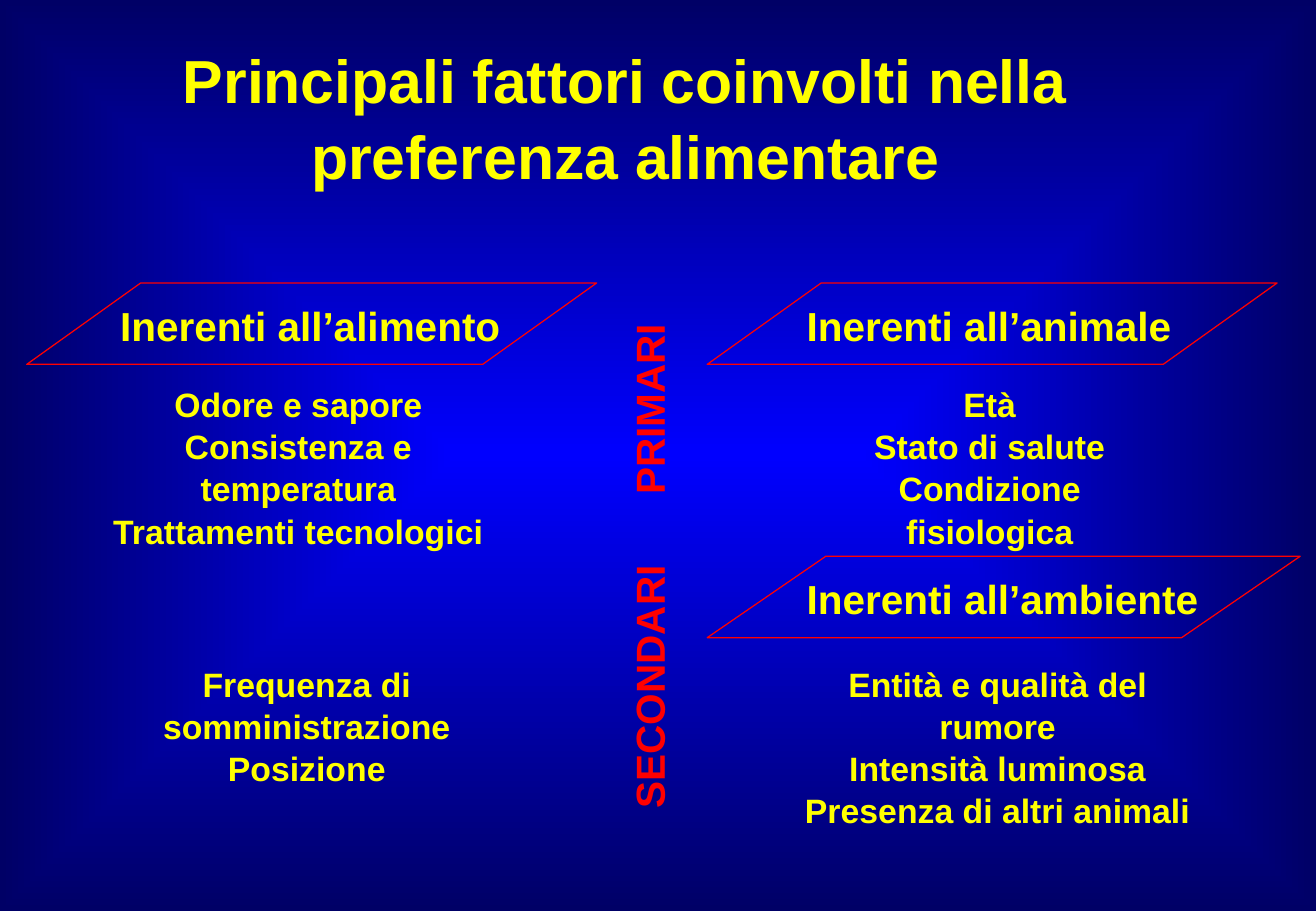
from lxml import etree
from pptx import Presentation
from pptx import util as u
from pptx.dml.color import RGBColor
from pptx.enum import shapes, text
from pptx.oxml.ns import qn

YELLOW, RED = "FFFF00", "FF0000"


def colour(value):
    return RGBColor.from_string(value)


class FactorSlide:
    """Holds the style and current slide, and draws each kind of element."""

    font = "Arial"
    line_spacing = 1.04

    def __init__(self, deck):
        self.page = deck.slides.add_slide(deck.slide_layouts[5])

    def background(self, centre, edge):
        fill = self.page.background.fill
        fill.gradient()
        for stop, value in zip(fill.gradient_stops, (centre, edge)):
            stop.color.rgb = colour(value)
        gradient = self.page.background._cSld.bg.bgPr.find(qn("a:gradFill"))
        radial = etree.Element(qn("a:path"), {"path": "shape"})
        etree.SubElement(radial, qn("a:fillToRect"), dict.fromkeys("ltrb", "50000"))
        gradient.replace(gradient.find(qn("a:lin")), radial)

    def add_lines(self, frame, lines, size, value, align):
        for index, line in enumerate(lines):
            para = frame.add_paragraph() if index else frame.paragraphs[0]
            para.alignment = align
            para.line_spacing = self.line_spacing
            for number, part in enumerate(line.split("\n")):
                if number:
                    para.add_line_break()
                span = para.add_run()
                span.text = part
                span.font.name = self.font
                span.font.size = u.Pt(size)
                span.font.bold = True
                span.font.color.rgb = colour(value)

    def title(self, wording, left, top, width, height):
        box = self.page.shapes.title
        box.left, box.top = u.Inches(left), u.Inches(top)
        box.width, box.height = u.Inches(width), u.Inches(height)
        frame = box.text_frame
        frame.auto_size = text.MSO_AUTO_SIZE.NONE
        frame.vertical_anchor = text.MSO_ANCHOR.MIDDLE
        self.add_lines(frame, [wording], 36, YELLOW, text.PP_ALIGN.CENTER)

    def text_box(self, lines, left, top, width, height, size=20, value=YELLOW,
                 align=text.PP_ALIGN.CENTER, wrap=True):
        box = self.page.shapes.add_textbox(*map(u.Inches, (left, top, width, height)))
        frame = box.text_frame
        frame.word_wrap = wrap
        self.add_lines(frame, lines, size, value, align)
        return frame

    def heading(self, wording, left, top, width, text_left, text_width):
        box = self.page.shapes.add_shape(
            shapes.MSO_SHAPE.FLOWCHART_DATA,
            *map(u.Inches, (left, top, width, 0.67)))
        box.shadow.inherit = False
        box.fill.background()
        box.line.color.rgb = colour(RED)
        box.line.width = u.Pt(0.75)
        self.text_box([wording], text_left, top + 0.08, text_width, 0.5, size=24,
                      align=text.PP_ALIGN.LEFT, wrap=False)

    def side_label(self, wording, top, height):
        frame = self.text_box([wording], 5.03, top, 0.6, height, size=24, value=RED)
        frame.vertical_anchor = text.MSO_ANCHOR.MIDDLE
        frame._txBody.bodyPr.set("vert", "vert270")


def main():
    deck = Presentation()
    deck.slide_width, deck.slide_height = u.Inches(10.83), u.Inches(7.5)
    slide = FactorSlide(deck)
    slide.background("0000FF", "000066")
    slide.title("Principali fattori coinvolti nella\npreferenza alimentare",
                0.54, 0.33, 9.21, 1.25)

    for heading in (
        ("Inerenti all’alimento", 0.22, 2.33, 4.69, 0.89, 3.33),
        ("Inerenti all’animale", 5.82, 2.33, 4.69, 6.54, 3.2),
        ("Inerenti all’ambiente", 5.82, 4.58, 4.88, 6.54, 3.42),
    ):
        slide.heading(*heading)

    primary_top, secondary_top = 3.1, 5.4
    for factors, left, top, width, height in (
        (["Odore e sapore", "Consistenza e temperatura", "Trattamenti tecnologici"],
         0.63, primary_top, 3.65, 1.43),
        (["Età", "Stato di salute", "Condizione fisiologica"],
         6.62, primary_top, 3.05, 1.43),
        (["Frequenza di somministrazione", "Posizione"],
         0.4, secondary_top, 4.25, 1.1),
        (["Entità e qualità del rumore", "Intensità luminosa",
          "Presenza di altri animali"],
         6.42, secondary_top, 3.58, 1.43),
    ):
        slide.text_box(factors, left, top, width, height)

    slide.side_label("PRIMARI", 2.4, 1.94)
    slide.side_label("SECONDARI", 4.48, 2.35)
    deck.save("out.pptx")


if __name__ == "__main__":
    main()
